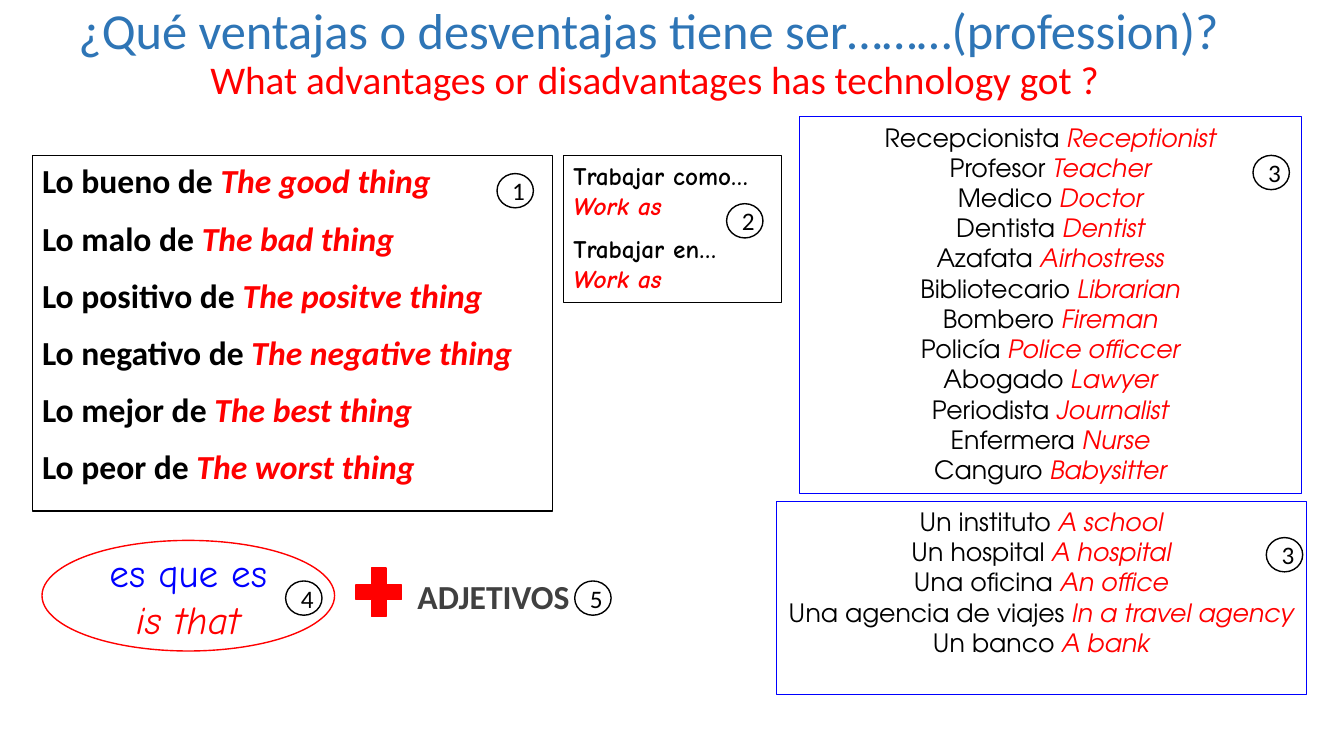
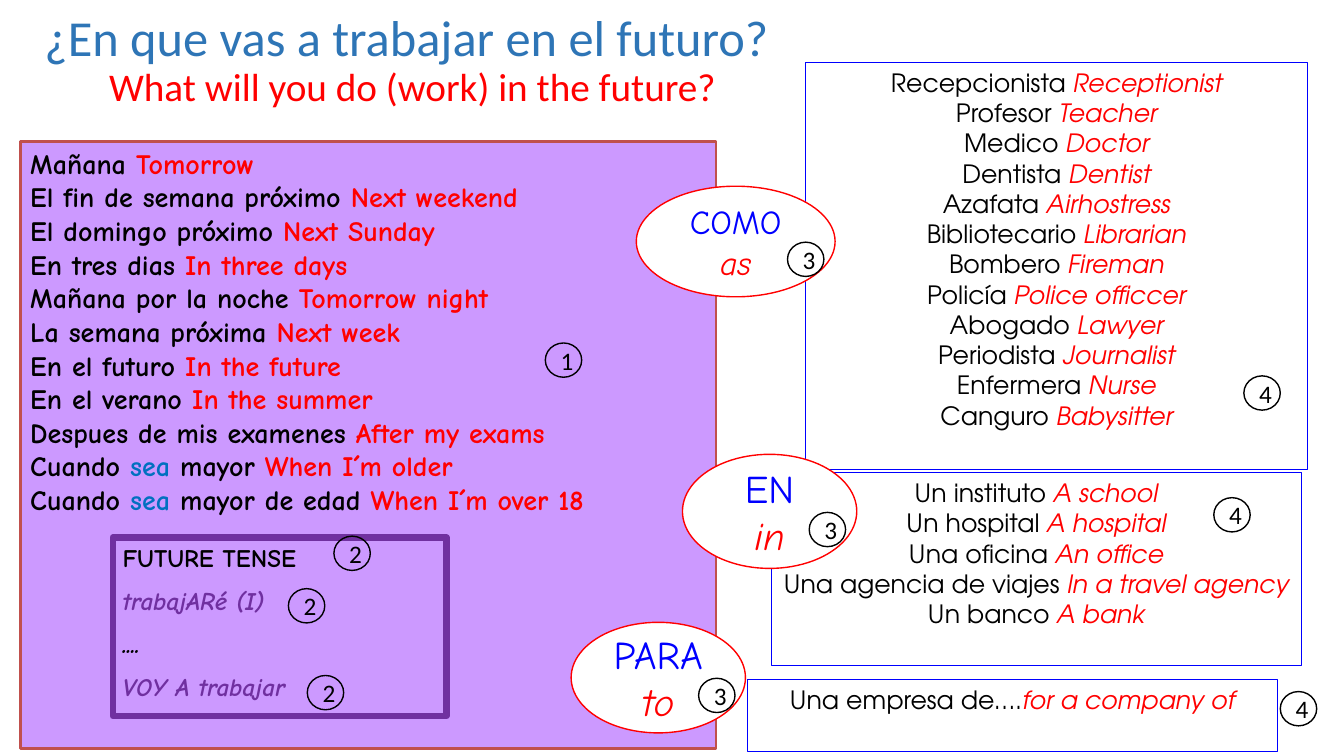
from pptx import Presentation
from pptx.dml.color import RGBColor
from pptx.enum import shapes, text
from pptx.util import Pt

COLOURS = {
    "black": "000000", "white": "FFFFFF", "red": "FF0000", "blue": "0000FF",
    "title": "2E75B6", "grey": "404040", "lilac": "CC99FF", "brick": "C0504D",
    "purple": "7030A0", "sky": "0070C0",
}
SANS, HAND, ROUND = "Calibri", "Comic Neue", "TeX Gyre Adventor"
LEFT, CENTRE = text.PP_ALIGN.LEFT, text.PP_ALIGN.CENTER
TOP, MIDDLE, BOTTOM = (text.MSO_ANCHOR.TOP, text.MSO_ANCHOR.MIDDLE,
                       text.MSO_ANCHOR.BOTTOM)
RECT, OVAL, PLUS = (shapes.MSO_SHAPE.RECTANGLE, shapes.MSO_SHAPE.OVAL,
                    shapes.MSO_SHAPE.MATH_PLUS)

JOBS = [
    "Recepcionista |Receptionist", "Profesor |Teacher", "Medico |Doctor",
    "Dentista |Dentist", "Azafata |Airhostress", "Bibliotecario |Librarian",
    "Bombero |Fireman", "Policía |Police officcer", "Abogado |Lawyer",
    "Periodista |Journalist", "Enfermera |Nurse", "Canguro |Babysitter",
]
PLACES = [
    "Un instituto |A school", "Un hospital |A hospital",
    "Una oficina |An office", "Una agencia de viajes |In a travel agency",
    "Un banco |A bank",
]
OPINIONS = [
    "Lo bueno de |The good thing", "Lo malo de |The bad thing",
    "Lo positivo de |The positve thing", "Lo negativo de |The negative thing",
    "Lo mejor de |The best thing", "Lo peor de |The worst thing",
]
TIMES = [
    "Mañana |Tomorrow", "El fin de semana próximo |Next weekend",
    "El domingo próximo |Next Sunday", "En tres dias |In three days",
    "Mañana por la noche |Tomorrow night", "La semana próxima |Next week",
    "En el futuro |In the future", "En el verano |In the summer",
    "Despues de mis examenes |After my exams",
]


def rgb(name):
    return RGBColor.from_string(COLOURS[name])


def pairs(lines, italic=True):
    """Turn "Spanish|English" lines into black and red runs."""
    split = [line.split("|") for line in lines]
    return [[(es, "black", False), (en, "red", italic)] for es, en in split]


class Deck:
    """The shared style and the slide being built; lengths are in points."""

    def __init__(self):
        self.prs = Presentation()
        self.prs.slide_width, self.prs.slide_height = Pt(960), Pt(540)
        self.s = None

    def fill_text(self, sp, lines, font, size, bold=False, align=CENTRE,
                  anchor=MIDDLE, gap=0):
        """Fill a shape with paragraphs of (text, colour, italic) runs."""
        tf = sp.text_frame
        tf.word_wrap, tf.vertical_anchor = True, anchor
        tf.auto_size = text.MSO_AUTO_SIZE.NONE
        for i, runs in enumerate(lines):
            p = tf.add_paragraph() if i else tf.paragraphs[0]
            p.alignment, p.space_before = align, Pt(gap if i else 0)
            p.font.name, p.font.size, p.font.bold = font, Pt(size), bold
            for words, colour, italic in runs:
                r = p.add_run()
                r.text, r.font.italic = words, italic
                r.font.color.rgb = rgb(colour)

    def slide(self, question, translation, width, height):
        """Start a slide with its two-line title."""
        self.s = self.prs.slides.add_slide(self.prs.slide_layouts[5])
        sp = self.s.shapes.title
        sp.left, sp.top, sp.width, sp.height = 0, 0, Pt(width), Pt(height)
        self.fill_text(sp, [[(question, "title", False)],
                            [(translation, "red", False)]],
                       SANS, 36, anchor=BOTTOM)
        for p in sp.text_frame.paragraphs:
            p.line_spacing = 0.9
        sp.text_frame.paragraphs[1].font.size = Pt(28)

    def shape(self, kind, box, line, weight=1, fill=None):
        sp = self.s.shapes.add_shape(kind, *map(Pt, box))
        sp.shadow.inherit = False
        sp.line.color.rgb, sp.line.width = rgb(line), Pt(weight)
        if fill:
            sp.fill.solid()
            sp.fill.fore_color.rgb = rgb(fill)
        else:
            sp.fill.background()
        return sp

    def panel(self, box, lines, font, size, line="black", weight=0.75,
              fill=None, gap=0):
        """Bold, left-aligned phrase box."""
        sp = self.shape(RECT, box, line, weight, fill)
        self.fill_text(sp, lines, font, size, True, LEFT, TOP, gap)

    def vocabulary(self, box, lines):
        """Centred word list in a blue frame."""
        sp = self.shape(RECT, box, "blue", 0.75)
        self.fill_text(sp, pairs(lines), ROUND, 18, anchor=TOP)

    def bubble(self, box, spanish, english, size=28):
        sp = self.shape(OVAL, box, "red", fill="white")
        self.fill_text(sp, [[(spanish, "blue", False)],
                            [(english, "red", True)]], HAND, size)

    def label(self, box, words):
        sp = self.s.shapes.add_textbox(*map(Pt, box))
        self.fill_text(sp, [[(words, "grey", False)]], SANS, 24, True,
                       anchor=TOP)

    def badges(self, *steps):
        """Numbered circles, each given as (number, left, top)."""
        for number, x, y in steps:
            sp = self.shape(OVAL, (x, y, 26, 24.5), "black")
            self.fill_text(sp, [[(str(number), "black", False)]], SANS, 18)


def advantages(deck):
    deck.slide("¿Qué ventajas o desventajas tiene ser………(profession)? ",
               "What advantages or disadvantages has technology got ?", 935, 77)

    # Opinion phrases and work phrases
    deck.panel((23, 111, 371.5, 254), pairs(OPINIONS), SANS, 24, gap=12)
    deck.panel((402.5, 111, 155.5, 105),
               pairs(["Trabajar como… |Work as", "Trabajar en… |Work as"]),
               HAND, 18, gap=9)

    # Jobs and workplaces
    deck.vocabulary((571, 83.5, 358.5, 269), JOBS)
    deck.vocabulary((554.5, 358, 378.5, 138), PLACES)

    # Linking phrase plus adjectives
    deck.bubble((30, 386, 209, 79), "es que es", "is that")
    deck.shape(PLUS, (248.5, 399.5, 44, 47), "red", fill="red")
    deck.label((254, 407.5, 197, 36), "ADJETIVOS")

    deck.badges((1, 355, 124), (2, 519, 145.5), (3, 895, 111),
                (3, 904.5, 384), (4, 204, 415), (5, 410.5, 415))


def future(deck):
    deck.slide("¿En que vas a trabajar en el futuro? ",
               "What will you do (work) in the future?", 589, 82)

    # Time phrases
    older = [[("Cuando ", "black", False), ("sea", "sky", False),
              (es, "black", False), (en, "red", False)]
             for es, en in ((" mayor ", "When I´m older"),
                            (" mayor de edad ", "When I´m over 18"))]
    deck.panel((14.5, 101, 497, 433.5), pairs(TIMES, italic=False) + older,
               HAND, 20, "brick", 2, "lilac")

    # Future tense
    tense = [("FUTURE TENSE", "black", False), ("trabajARé (I)", "purple", True),
             ("....", "black", True), ("VOY A trabajar", "purple", True)]
    deck.panel((80.5, 384, 238.5, 127.5), [[run] for run in tense],
               HAND, 18, "purple", 4.5, gap=9)

    # Jobs, workplaces and companies
    deck.vocabulary((575.5, 44.5, 358.5, 291), JOBS)
    deck.vocabulary((551, 337.5, 378.5, 138), PLACES)
    deck.vocabulary((534, 485.5, 378.5, 51),
                    ["Una empresa de….|for a company of"])

    # Linking words
    deck.bubble((454.5, 133, 142, 79), "COMO", "as", 24)
    deck.bubble((487.5, 324.5, 124.5, 81.5), "EN", "in")
    deck.bubble((408, 444.5, 124.5, 79), "PARA", "to")

    deck.badges((1, 389.5, 245), (2, 238.5, 383), (2, 206, 420.5),
                (2, 219.5, 482.5), (3, 562.5, 173), (3, 578, 366),
                (3, 499, 484.5), (4, 888.5, 268.5), (4, 867, 355.5),
                (4, 914.5, 494))


def main():
    deck = Deck()
    advantages(deck)
    future(deck)
    deck.prs.save("out.pptx")


if __name__ == "__main__":
    main()
